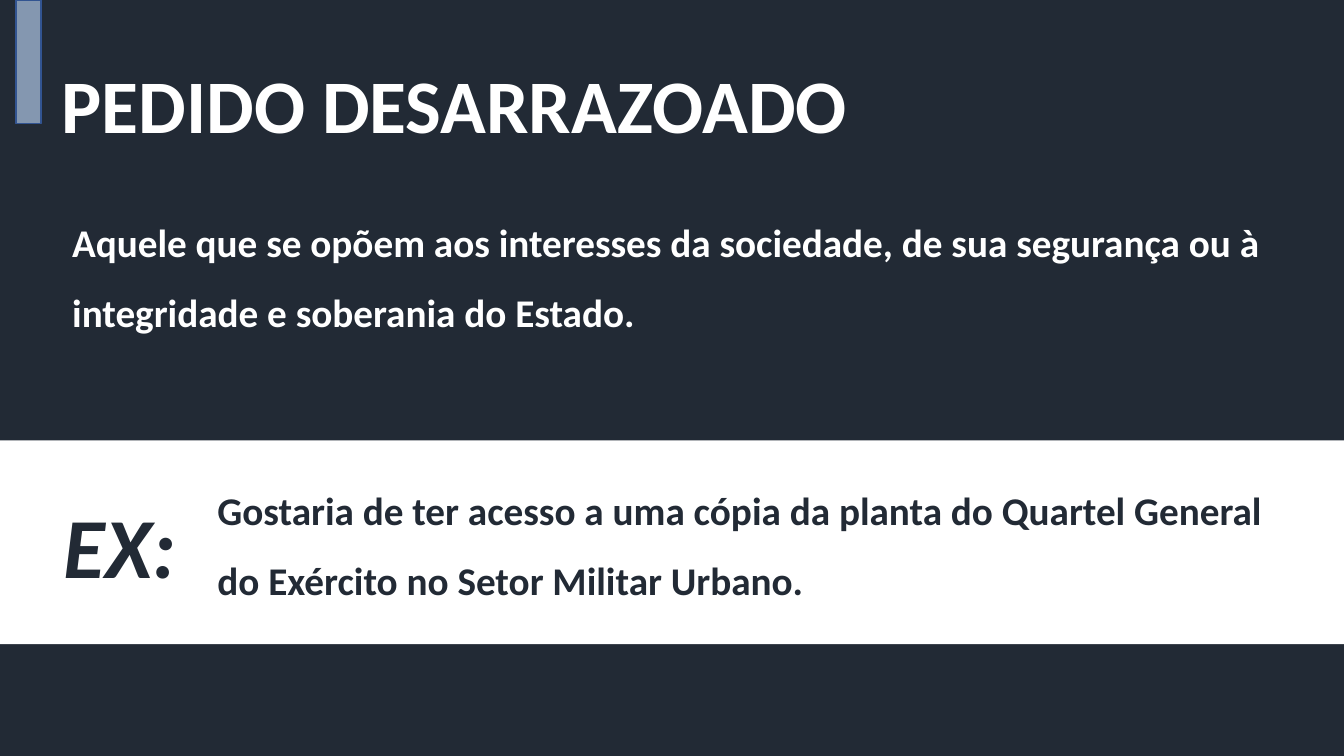
"""Build the slide on unreasonable requests, with its definition and example."""
from pptx import Presentation
from pptx.dml.color import RGBColor
from pptx.enum.shapes import MSO_SHAPE
from pptx.enum.text import MSO_ANCHOR, MSO_AUTO_SIZE, PP_ALIGN
from pptx.util import Cm, Pt

NAVY, WHITE = "222A35", "FFFFFF"


def color(value):
    return RGBColor.from_string(value)


def write(box, text, size, ink, spacing, anchor, italic=False):
    frame = box.text_frame
    frame.text = text
    frame.word_wrap = True
    frame.auto_size = MSO_AUTO_SIZE.NONE
    frame.vertical_anchor = anchor
    para = frame.paragraphs[0]
    para.alignment = PP_ALIGN.LEFT
    para.line_spacing = spacing
    font = para.runs[0].font
    font.name = "Calibri"
    font.size = Pt(size)
    font.bold = True
    font.italic = italic
    font.color.rgb = color(ink)


deck = Presentation()
deck.slide_width, deck.slide_height = Cm(33.87), Cm(19.05)
page = deck.slides.add_slide(deck.slide_layouts[5])
page.background.fill.solid()
page.background.fill.fore_color.rgb = color(NAVY)

title = page.shapes.title
title.left, title.top, title.width, title.height = Cm(1.3), Cm(1.3), Cm(31.85), Cm(2.87)
write(title, "PEDIDO DESARRAZOADO", 54, WHITE, 0.9, MSO_ANCHOR.MIDDLE)

bars = [
    (0, 11.1, 33.87, 5.13, WHITE, None),
    (0.4, 0, 0.64, 3.12, "8497B0", "325491"),
]
for left, top, width, height, fill, outline in bars:
    bar = page.shapes.add_shape(
        MSO_SHAPE.RECTANGLE, Cm(left), Cm(top), Cm(width), Cm(height))
    bar.shadow.inherit = False
    bar.fill.solid()
    bar.fill.fore_color.rgb = color(fill)
    if outline:
        bar.line.color.rgb = color(outline)
        bar.line.width = Pt(1)
    else:
        bar.line.fill.background()

texts = [
    (1.57, 4.78, 30.71, 4.19,
     "Aquele que se opõem aos interesses da sociedade, de sua segurança ou à "
     "integridade e soberania do Estado.",
     28, WHITE, 1.5, MSO_ANCHOR.TOP, False),
    (5.23, 11.53, 27.05, 4.19,
     "Gostaria de ter acesso a uma cópia da planta do Quartel General "
     "do Exército no Setor Militar Urbano.",
     28, NAVY, 1.5, MSO_ANCHOR.TOP, False),
    (1.35, 11.43, 3.89, 3.56, "EX:", 61, NAVY, 1.4, MSO_ANCHOR.MIDDLE, True),
]
for left, top, width, height, *content in texts:
    box = page.shapes.add_textbox(Cm(left), Cm(top), Cm(width), Cm(height))
    write(box, *content)

deck.save("out.pptx")
